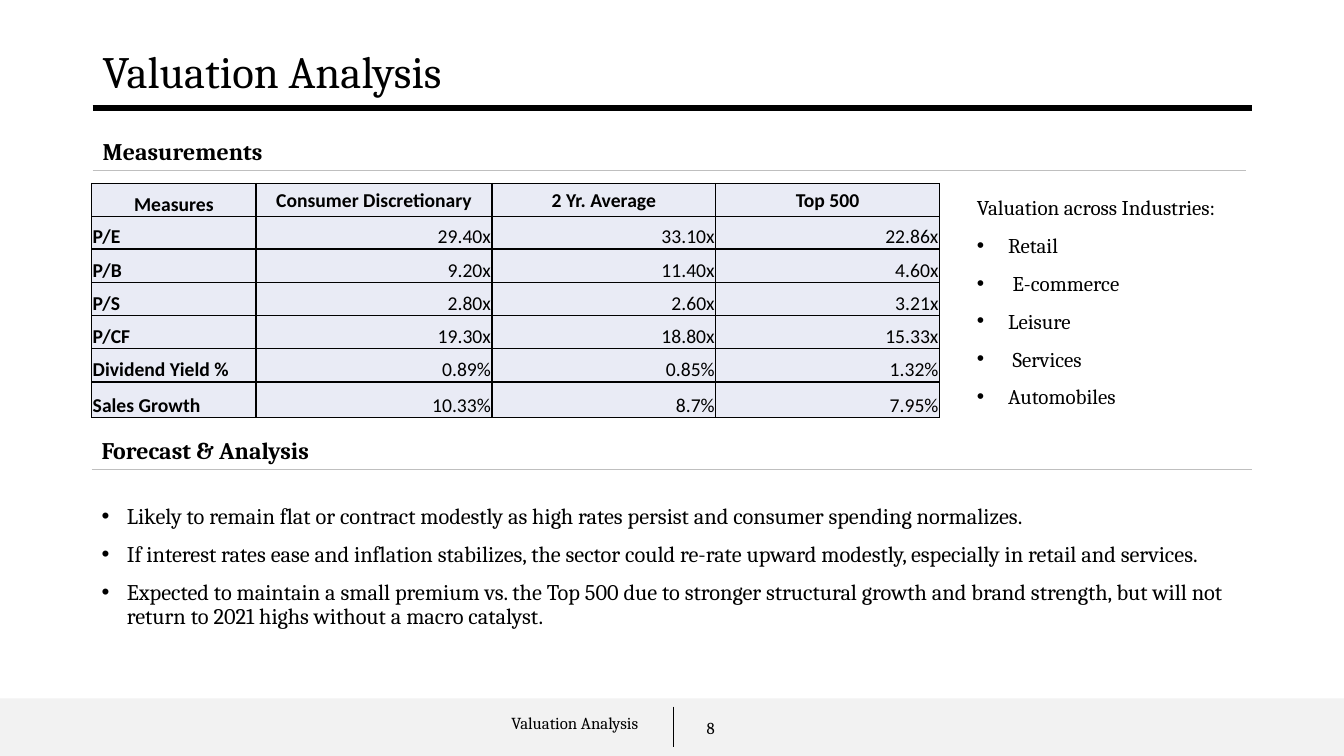
import lxml.etree
import pptx
import pptx.dml.color
import pptx.enum.shapes
import pptx.enum.text
import pptx.oxml.ns
import pptx.util

Inches = pptx.util.Inches
Pt = pptx.util.Pt
RGBColor = pptx.dml.color.RGBColor
ALIGN = pptx.enum.text.PP_ALIGN
ANCHOR = pptx.enum.text.MSO_ANCHOR
qn = pptx.oxml.ns.qn

BLACK = RGBColor(0x00, 0x00, 0x00)
RULE_GREY = RGBColor(0xBF, 0xBF, 0xBF)
FOOTER_GREY = RGBColor(0xF2, 0xF2, 0xF2)
CELL_BLUE = RGBColor(0xE9, 0xEB, 0xF5)

SLIDE_W, SLIDE_H = 13.33, 7.5
LEFT, WIDTH = 0.92, 11.5

MEASURES = [
    ["Measures", "Consumer Discretionary", "2 Yr. Average", "Top 500"],
    ["P/E", "29.40x", "33.10x", "22.86x"],
    ["P/B", "9.20x", "11.40x", "4.60x"],
    ["P/S", "2.80x", "2.60x", "3.21x"],
    ["P/CF", "19.30x", "18.80x", "15.33x"],
    ["Dividend Yield %", "0.89%", "0.85%", "1.32%"],
    ["Sales Growth", "10.33%", "8.7%", "7.95%"],
]
COLUMN_WIDTHS = [1.63, 2.34, 2.22, 2.22]
ROW_HEIGHTS = [0.33, 0.32, 0.33, 0.33, 0.33, 0.33, 0.35]

INDUSTRIES = ["Retail", " E-commerce", "Leisure", " Services", "Automobiles"]
FORECASTS = [
    "Likely to remain flat or contract modestly as high rates persist and "
    "consumer spending normalizes.",
    "If interest rates ease and inflation stabilizes, the sector could re-rate "
    "upward modestly, especially in retail and services.",
    "Expected to maintain a small premium vs. the Top 500 due to stronger "
    "structural growth and brand strength, but will not return to 2021 highs "
    "without a macro catalyst.",
]


def set_all(target, values):
    for name, value in values.items():
        setattr(target, name, value)


def style_font(font, size, name="Cambria", bold=False):
    set_all(font, {"size": Pt(size), "name": name, "bold": bold})
    font.color.rgb = BLACK


def add_bullet(p, indent):
    pPr = p._p.get_or_add_pPr()
    pPr.set("marL", str(Inches(indent)))
    pPr.set("indent", str(-Inches(indent)))
    lxml.etree.SubElement(pPr, qn("a:buFont"), typeface="Arial")
    lxml.etree.SubElement(pPr, qn("a:buChar"), char="•")


def add_text(s, box, lines, size, anchor=ANCHOR.TOP, align=ALIGN.LEFT, bold=False,
             spacing=0.9, before=0, indent=0, plain=0):
    """Place lines in box; those after the first `plain` ones get bullets."""
    tf = s.shapes.add_textbox(*map(Inches, box)).text_frame
    set_all(tf, {"word_wrap": True, "vertical_anchor": anchor})
    for i, line in enumerate(lines):
        p = tf.add_paragraph() if i else tf.paragraphs[0]
        if indent and i >= plain:
            add_bullet(p, indent)
        set_all(p, {"alignment": align, "line_spacing": spacing})
        if i and before:
            p.space_before = Pt(before)
        r = p.add_run()
        r.text = line
        style_font(r.font, size, bold=bold)
    return tf


def add_line(s, x1, y1, x2, y2, color, width):
    line = s.shapes.add_connector(pptx.enum.shapes.MSO_CONNECTOR.STRAIGHT,
                                  *map(Inches, (x1, y1, x2, y2)))
    line.line.color.rgb = color
    line.line.width = Pt(width)
    lxml.etree.SubElement(line._element.spPr, qn("a:effectLst"))


def border_cell(cell):
    tcPr = cell._tc.get_or_add_tcPr()
    for i, side in enumerate(("lnL", "lnR", "lnT", "lnB")):
        ln = lxml.etree.Element(qn("a:" + side), w=str(Pt(1)))
        fill = lxml.etree.SubElement(ln, qn("a:solidFill"))
        lxml.etree.SubElement(fill, qn("a:srgbClr"), val=str(BLACK))
        tcPr.insert(i, ln)


def add_title(s, x, y, w, h):
    add_text(s, (x, y, w, h), ["Valuation Analysis"], 32, ANCHOR.MIDDLE)
    add_line(s, x, y + h, x + w, y + h, BLACK, 4)


def add_heading(s, x, y, w, text):
    height = 0.42
    add_text(s, (x, y, 5.67, height), [text], 17, ANCHOR.BOTTOM, bold=True)
    add_line(s, x, y + height, x + w, y + height, RULE_GREY, 0.5)


def add_measures(s, x, y):
    table = s.shapes.add_table(
        len(MEASURES), len(COLUMN_WIDTHS), Inches(x), Inches(y),
        Inches(sum(COLUMN_WIDTHS)), Inches(sum(ROW_HEIGHTS))).table
    for column, width in zip(table.columns, COLUMN_WIDTHS):
        column.width = Inches(width)
    for i, (row, height) in enumerate(zip(table.rows, ROW_HEIGHTS)):
        row.height = Inches(height)
        for j, cell in enumerate(row.cells):
            set_all(cell, {
                "margin_left": Inches(0.01), "margin_right": Inches(0.01),
                "margin_top": Inches(0.01), "margin_bottom": 0,
                "vertical_anchor": ANCHOR.MIDDLE if i == 0 and j else ANCHOR.BOTTOM,
            })
            cell.fill.solid()
            cell.fill.fore_color.rgb = CELL_BLUE
            border_cell(cell)
            p = cell.text_frame.paragraphs[0]
            p.alignment = ALIGN.CENTER if i == 0 else ALIGN.RIGHT if j else ALIGN.LEFT
            r = p.add_run()
            r.text = MEASURES[i][j]
            style_font(r.font, 14, "Calibri", bold=i == 0 or j == 0)


def add_industries(s, x, y, w, h):
    tf = add_text(s, (x, y, w, h), ["Valuation across Industries:"] + INDUSTRIES, 15,
                  spacing=1.5, indent=0.31, plain=1)
    tf.auto_size = pptx.enum.text.MSO_AUTO_SIZE.SHAPE_TO_FIT_TEXT


def add_footer(s, x, y, w, h):
    band = s.shapes.add_shape(pptx.enum.shapes.MSO_SHAPE.RECTANGLE,
                              *map(Inches, (x, y, w, h)))
    band.shadow.inherit = False
    band.fill.solid()
    band.fill.fore_color.rgb = FOOTER_GREY
    band.line.fill.background()
    divider = x + 6.68
    add_line(s, divider, y + 0.08, divider, y + 0.48, BLACK, 0.75)
    add_text(s, (divider - 3.25, y + 0.11, 3, 0.4), ["Valuation Analysis"], 12,
             align=ALIGN.RIGHT)
    add_text(s, (divider + 0.23, y + 0.09, 3, 0.4), ["8"], 12, ANCHOR.MIDDLE, spacing=1.0)


def add_valuation_slide(prs):
    s = prs.slides.add_slide(prs.slide_layouts[6])
    add_footer(s, 0, 6.93, SLIDE_W, 0.57)
    add_title(s, LEFT, 0.4, WIDTH, 0.67)
    # Measurements: table and industry list
    add_heading(s, LEFT, 1.27, 11.44, "Measurements")
    add_measures(s, 0.91, 1.82)
    add_industries(s, 9.59, 1.76, 3.64, 2.33)
    # Forecast
    add_heading(s, 0.91, 4.24, 11.51, "Forecast & Analysis")
    add_text(s, (0.91, 4.96, 11.49, 1.8), FORECASTS, 16, before=10, indent=0.25)


def main():
    prs = pptx.Presentation()
    set_all(prs, {"slide_width": Inches(SLIDE_W), "slide_height": Inches(SLIDE_H)})
    add_valuation_slide(prs)
    prs.save("out.pptx")


if __name__ == "__main__":
    main()
